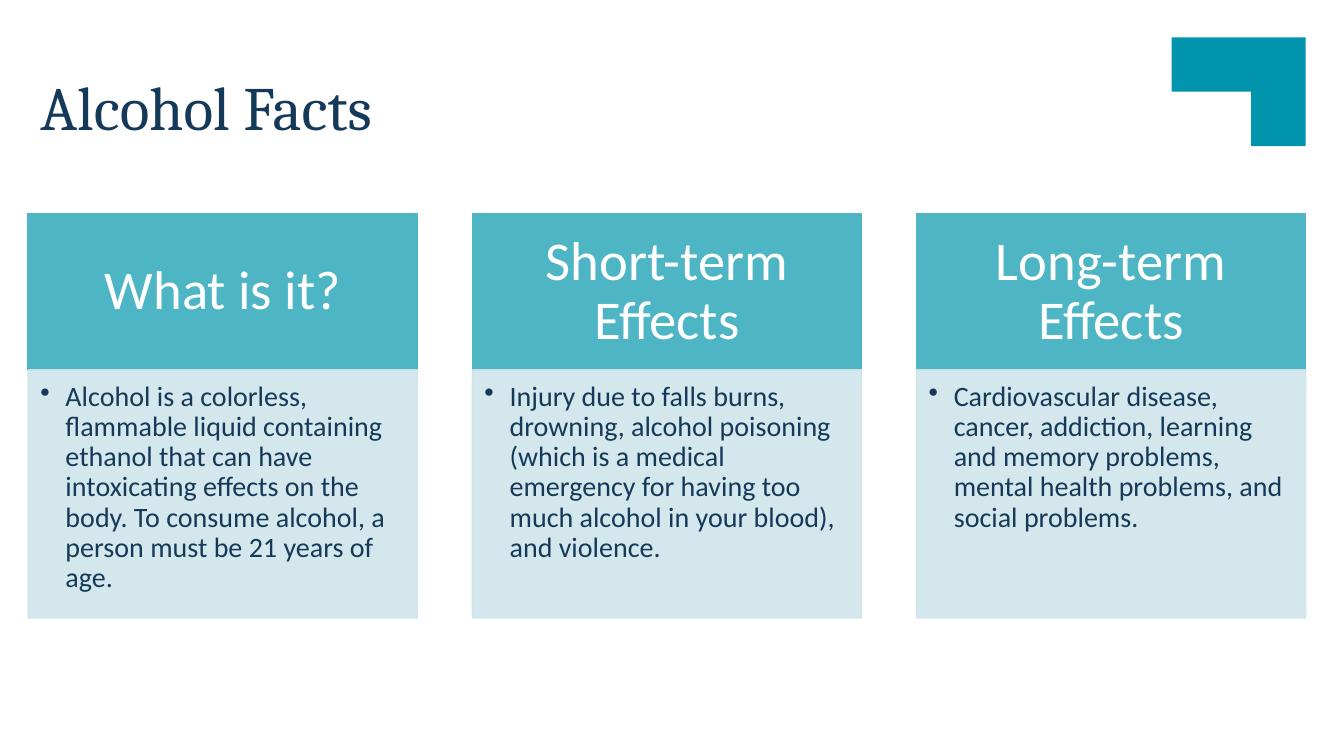
import pptx
import pptx.util
import pptx.dml.color
import pptx.enum.shapes
import pptx.enum.text
import pptx.oxml
import pptx.oxml.ns

Inches = pptx.util.Inches
ALIGN = pptx.enum.text.PP_ALIGN
ANCHOR = pptx.enum.text.MSO_ANCHOR

NAVY, TEAL, AQUA, PALE, WHITE = "153959", "0095AD", "4EB5C4", "D0E5EA", "FFFFFF"

FACTS = [
    ("What is it?",
     "Alcohol is a colorless, flammable liquid containing ethanol that can have "
     "intoxicating effects on the body. To consume alcohol, a person must be 21 "
     "years of age."),
    ("Short-term Effects",
     "Injury due to falls burns, drowning, alcohol poisoning (which is a medical "
     "emergency for having too much alcohol in your blood), and violence."),
    ("Long-term Effects",
     "Cardiovascular disease, cancer, addiction, learning and memory problems, "
     "mental health problems, and social problems."),
]


def color(hex_code):
    return pptx.dml.color.RGBColor.from_string(hex_code)


def paint(shape, hex_code):
    shape.shadow.inherit = False
    shape.fill.solid()
    shape.fill.fore_color.rgb = color(hex_code)
    shape.line.fill.background()


def add_block(page, box, hex_code):
    block = page.shapes.add_shape(pptx.enum.shapes.MSO_SHAPE.RECTANGLE,
                                  *map(Inches, box))
    paint(block, hex_code)
    block.line.color.rgb = color(hex_code)
    block.line.width = pptx.util.Pt(1)
    return block


def set_margins(frame, left, top, right, bottom):
    frame.margin_left, frame.margin_top = Inches(left), Inches(top)
    frame.margin_right, frame.margin_bottom = Inches(right), Inches(bottom)


def format_text(frame, size, font_name, hex_code, align, anchor):
    frame.word_wrap = True
    frame.vertical_anchor = anchor
    para = frame.paragraphs[0]
    para.alignment = align
    para.line_spacing = 0.9
    for span in para.runs:
        span.font.size = pptx.util.Pt(size)
        span.font.name = font_name
        span.font.color.rgb = color(hex_code)


def add_bullet(para, indent):
    properties = para._p.get_or_add_pPr()
    properties.set("marL", str(Inches(indent)))
    properties.set("indent", str(-Inches(indent)))
    properties.append(pptx.oxml.parse_xml(
        f'<a:buChar {pptx.oxml.ns.nsdecls("a")} char="•"/>'))


def set_opacity(shape, percent):
    for node in shape._element.spPr.iter(pptx.oxml.ns.qn("a:srgbClr")):
        node.append(pptx.oxml.parse_xml(
            f'<a:alpha {pptx.oxml.ns.nsdecls("a")} val="{percent * 1000}"/>'))


def add_corner(page, box):
    left, top, width, height = box
    right, bottom, arm = left + width, top + height, height / 2
    outline = [(right, top), (right, bottom), (right - arm, bottom),
               (right - arm, top + arm), (left, top + arm)]
    builder = page.shapes.build_freeform(Inches(left), Inches(top))
    builder.add_line_segments([(Inches(x), Inches(y)) for x, y in outline])
    paint(builder.convert_to_shape(), TEAL)


def add_title(page, box, text):
    title = page.shapes.title
    title.left, title.top, title.width, title.height = map(Inches, box)
    title.text_frame.text = text
    title.text_frame.auto_size = pptx.enum.text.MSO_AUTO_SIZE.NONE
    format_text(title.text_frame, 44, "Cambria", NAVY, ALIGN.LEFT, ANCHOR.MIDDLE)


def add_fact_column(page, box, heading, detail):
    left, top, width, height = box
    header_height = 1.55

    # Heading block
    header = add_block(page, (left, top, width, header_height), AQUA)
    header.text_frame.text = heading
    set_margins(header.text_frame, 0.3, 0.17, 0.3, 0.17)
    format_text(header.text_frame, 39, "Calibri", WHITE, ALIGN.CENTER, ANCHOR.MIDDLE)

    # Detail block
    body = add_block(page, (left, top + header_height, width,
                            height - header_height), PALE)
    set_opacity(body, 90)
    body.text_frame.text = detail
    set_margins(body.text_frame, 0.12, 0.12, 0.16, 0.17)
    add_bullet(body.text_frame.paragraphs[0], 0.25)
    format_text(body.text_frame, 20, "Calibri", NAVY, ALIGN.LEFT, ANCHOR.TOP)


def add_fact_columns(page, box, facts):
    left, top, width, height = box
    column_width = 3.86
    step = (width - column_width) / (len(facts) - 1)
    for index, (heading, detail) in enumerate(facts):
        add_fact_column(page, (left + index * step, top, column_width, height),
                        heading, detail)


def main():
    deck = pptx.Presentation()
    deck.slide_width, deck.slide_height = Inches(13.33), Inches(7.5)
    page = deck.slides.add_slide(deck.slide_layouts.get_by_name("Title Only"))

    # Corner ornament
    add_corner(page, (11.62, 0.37, 1.33, 1.08))

    # Title and columns
    add_title(page, (0.3, 0.37, 11.16, 1.45), "Alcohol Facts")
    add_fact_columns(page, (0.28, 2.12, 12.67, 4.01), FACTS)

    deck.save("out.pptx")


if __name__ == "__main__":
    main()
